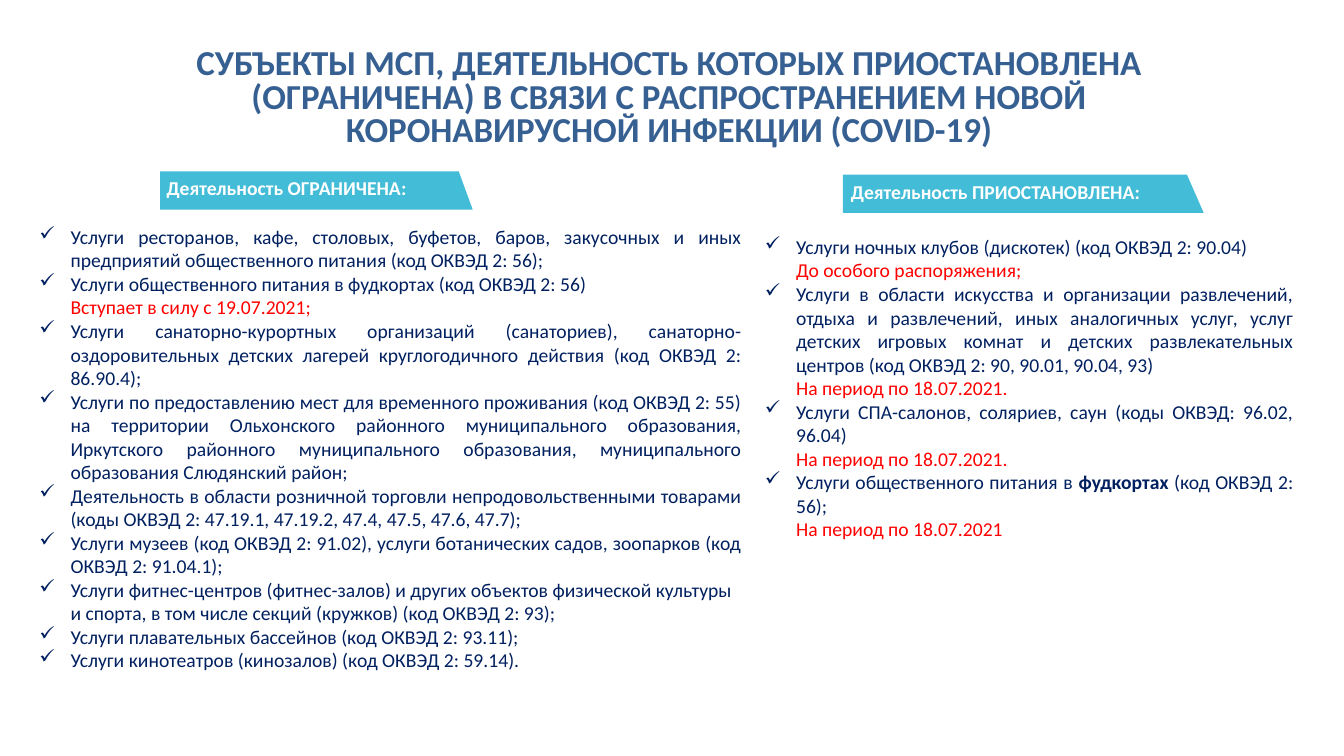
from lxml import etree
from pptx import Presentation
from pptx.dml.color import RGBColor
from pptx.enum.text import MSO_ANCHOR, PP_ALIGN
from pptx.oxml.ns import qn
from pptx.util import Pt

NAVY, RED, BLUE, TEAL, WHITE = "002060", "FF0000", "376092", "43BCD7", "FFFFFF"
INDENT = 22.3

TITLE = ("СУБЪЕКТЫ МСП, ДЕЯТЕЛЬНОСТЬ КОТОРЫХ ПРИОСТАНОВЛЕНА (ОГРАНИЧЕНА) "
         "В СВЯЗИ С РАСПРОСТРАНЕНИЕМ НОВОЙ КОРОНАВИРУСНОЙ ИНФЕКЦИИ (COVID-19)")

# Each entry: service (bold between **), red note or None, alignment
J, L = PP_ALIGN.JUSTIFY, PP_ALIGN.LEFT
LIMITED = [
    ("Услуги ресторанов, кафе, столовых, буфетов, баров, закусочных и иных "
     "предприятий общественного питания (код ОКВЭД 2: 56);", None, J),
    ("Услуги общественного питания в фудкортах (код ОКВЭД 2: 56)",
     "Вступает в силу с 19.07.2021;", J),
    ("Услуги санаторно-курортных организаций (санаториев), "
     "санаторно-оздоровительных детских лагерей круглогодичного действия "
     "(код ОКВЭД 2: 86.90.4);", None, J),
    ("Услуги по предоставлению мест для временного проживания (код ОКВЭД 2: 55) "
     "на территории Ольхонского районного муниципального образования, "
     "Иркутского районного муниципального образования, муниципального "
     "образования Слюдянский район;", None, J),
    ("Деятельность в области розничной торговли непродовольственными товарами "
     "(коды ОКВЭД 2: 47.19.1, 47.19.2, 47.4, 47.5, 47.6, 47.7);", None, J),
    ("Услуги музеев (код ОКВЭД 2: 91.02), услуги ботанических садов, зоопарков "
     "(код ОКВЭД 2: 91.04.1);", None, J),
    ("Услуги фитнес-центров (фитнес-залов) и других объектов физической культуры "
     "и спорта, в том числе секций (кружков) (код ОКВЭД 2: 93);", None, L),
    ("Услуги плавательных бассейнов (код ОКВЭД 2: 93.11);", None, L),
    ("Услуги кинотеатров (кинозалов) (код ОКВЭД 2: 59.14).", None, L),
]
SUSPENDED = [
    ("Услуги ночных клубов (дискотек) (код ОКВЭД 2: 90.04)",
     "До особого распоряжения;", J),
    ("Услуги в области искусства и организации развлечений, отдыха и развлечений, "
     "иных аналогичных услуг, услуг детских игровых комнат и детских "
     "развлекательных центров (код ОКВЭД 2: 90, 90.01, 90.04, 93)",
     "На период по 18.07.2021.", J),
    ("Услуги СПА-салонов, соляриев, саун (коды ОКВЭД: 96.02, 96.04)",
     "На период по 18.07.2021.", J),
    ("Услуги общественного питания в **фудкортах** (код ОКВЭД 2: 56);",
     "На период по 18.07.2021", J),
]


def rgb(value):
    return RGBColor.from_string(value)


def set_attrs(obj, values):
    for name, value in values.items():
        setattr(obj, name, value)


def add_run(p, text, color, size=14, bold=False):
    r = p.add_run()
    r.text = text
    set_attrs(r.font, {"name": "Calibri", "size": Pt(size), "bold": bold})
    r.font.color.rgb = rgb(color)


def set_indent(p, bullet=None):
    """Indent the paragraph; a bullet hangs to the left of the text."""
    pPr = p._p.get_or_add_pPr()
    pPr.set("marL", str(Pt(INDENT)))
    pPr.set("indent", str(-Pt(INDENT) if bullet else 0))
    if bullet:
        etree.SubElement(pPr, qn("a:buChar")).set("char", bullet)


def add_text_box(s, left, top, width, height):
    tf = s.shapes.add_textbox(Pt(left), Pt(top), Pt(width), Pt(height)).text_frame
    tf.word_wrap = True
    return tf


def add_title(s):
    tf = add_text_box(s, 119.5, 33, 716.5, 75.6)
    set_attrs(tf, {"vertical_anchor": MSO_ANCHOR.MIDDLE,
                   "margin_left": 0, "margin_right": 0})
    p = tf.paragraphs[0]
    set_attrs(p, {"alignment": PP_ALIGN.CENTER, "line_spacing": 0.8})
    add_run(p, TITLE, BLUE, 25, True)


def add_ribbon(s, text, left, top, width, slant, margin):
    """Label on a band whose right end is cut at a slant."""
    right, bottom = left + width, top + 27.4
    builder = s.shapes.build_freeform(Pt(left), Pt(top))
    corners = [(right - slant, top), (right, bottom), (left, bottom)]
    builder.add_line_segments([(Pt(x), Pt(y)) for x, y in corners], close=True)
    sp = builder.convert_to_shape()
    sp.shadow.inherit = False
    sp.fill.solid()
    sp.fill.fore_color.rgb = rgb(TEAL)
    sp.line.fill.background()
    tf = sp.text_frame
    set_attrs(tf, {"word_wrap": True, "vertical_anchor": MSO_ANCHOR.TOP,
                   "margin_left": Pt(margin), "margin_top": Pt(3.6),
                   "margin_right": 0, "margin_bottom": 0})
    p = tf.paragraphs[0]
    p.alignment = PP_ALIGN.LEFT
    add_run(p, text, WHITE, bold=True)


def add_services(s, services, left, top, width, height):
    tf = add_text_box(s, left, top, width, height)
    p = tf.paragraphs[0]
    for i, (service, note, alignment) in enumerate(services):
        if i:
            p = tf.add_paragraph()
        p.alignment = alignment
        set_indent(p, "✓")
        for k, part in enumerate(service.split("**")):
            add_run(p, part, NAVY, bold=k % 2 == 1)
        if note:
            p = tf.add_paragraph()
            p.alignment = alignment
            set_indent(p)
            add_run(p, note, RED)


def main():
    prs = Presentation()
    set_attrs(prs, {"slide_width": Pt(960), "slide_height": Pt(540)})
    s = prs.slides.add_slide(prs.slide_layouts[6])
    add_title(s)
    add_ribbon(s, "Деятельность ОГРАНИЧЕНА:", 114.5, 122.4, 223.2, 10, 4.5)
    add_ribbon(s, "Деятельность ПРИОСТАНОВЛЕНА:", 602, 124.7, 257.8, 12, 5.8)
    add_services(s, LIMITED, 21, 157, 516, 346)
    add_services(s, SUSPENDED, 539.3, 164.2, 391.7, 262)
    prs.save("out.pptx")


if __name__ == "__main__":
    main()
